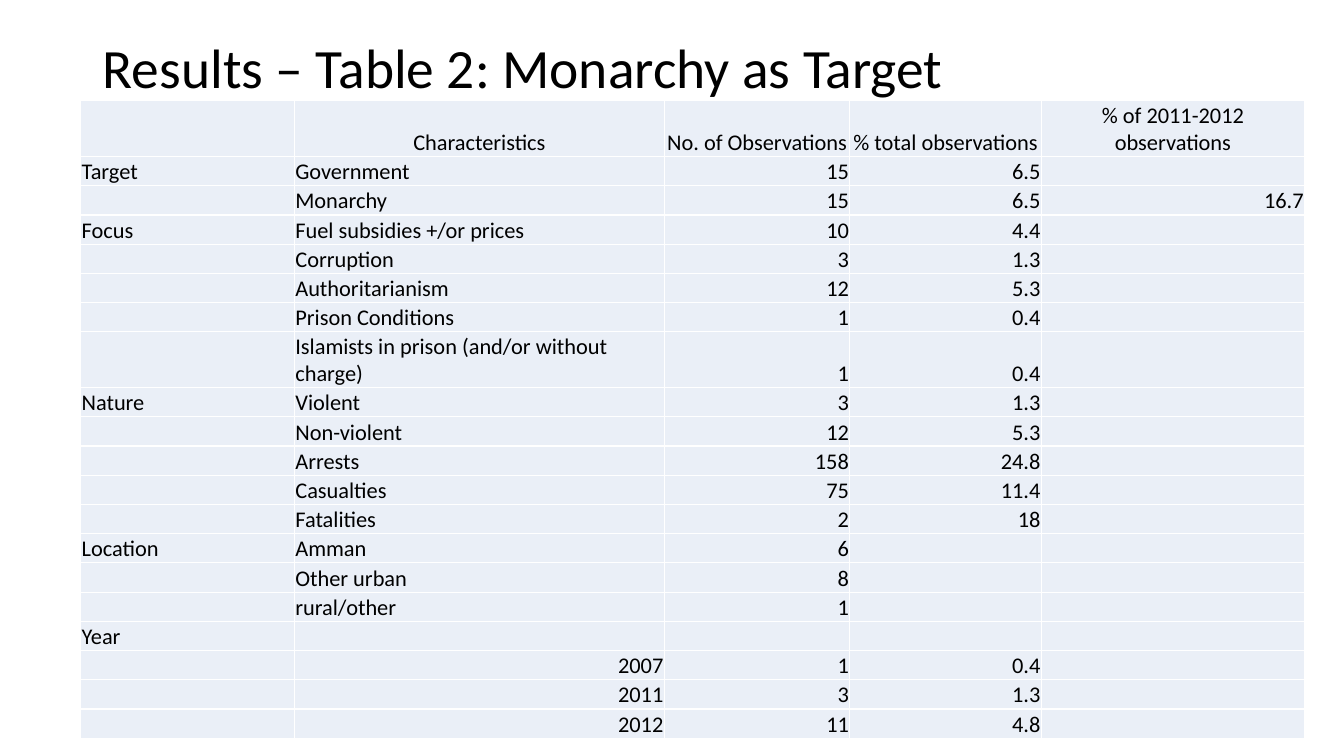
from dataclasses import dataclass

from lxml import etree
from pptx import Presentation, util as u
from pptx.dml.color import RGBColor
from pptx.enum import text
from pptx.oxml.ns import qn


@dataclass(frozen=True)
class Theme:
    font: str = "Calibri"
    ink: str = "000000"
    cell: str = "EAEFF7"
    rule: str = "FFFFFF"
    title_size: float = 39.6
    table_size: float = 16


theme = Theme()
LEFT, CENTER, RIGHT = text.PP_ALIGN.LEFT, text.PP_ALIGN.CENTER, text.PP_ALIGN.RIGHT

column_widths = [2.12, 3.67, 1.84, 1.9, 2.61]
row_height = 0.29
table_left, table_top = 0.8, 1

header = ["", "Characteristics", "No. of Observations", "% total observations",
          "% of 2011-2012 observations"]
findings = [
    ["Target", "Government", "15", "6.5", ""],
    ["", "Monarchy", "15", "6.5", "16.7"],
    ["Focus", "Fuel subsidies +/or prices", "10", "4.4", ""],
    ["", "Corruption", "3", "1.3", ""],
    ["", "Authoritarianism", "12", "5.3", ""],
    ["", "Prison Conditions", "1", "0.4", ""],
    ["", "Islamists in prison (and/or without charge)", "1", "0.4", ""],
    ["Nature", "Violent", "3", "1.3", ""],
    ["", "Non-violent", "12", "5.3", ""],
    ["", "Arrests", "158", "24.8", ""],
    ["", "Casualties", "75", "11.4", ""],
    ["", "Fatalities", "2", "18", ""],
    ["Location", "Amman", "6", "", ""],
    ["", "Other urban", "8", "", ""],
    ["", "rural/other", "1", "", ""],
    ["Year", "", "", "", ""],
    ["", "2007", "1", "0.4", ""],
    ["", "2011", "3", "1.3", ""],
    ["", "2012", "11", "4.8", ""],
]
rows = [header] + findings


def write(paragraph, wording, size, align):
    paragraph.text = wording
    paragraph.alignment = align
    for run in paragraph.runs:
        run.font.name = theme.font
        run.font.size = u.Pt(size)
        run.font.color.rgb = RGBColor.from_string(theme.ink)
    if not wording:
        # An empty cell needs its own type size, or it would stretch the row.
        etree.SubElement(paragraph._p, qn("a:endParaRPr"), sz=str(int(size * 100)))


def paint(cell):
    """Fill the cell and rule its four sides."""
    cell.fill.solid()
    cell.fill.fore_color.rgb = RGBColor.from_string(theme.cell)
    properties = cell._tc.get_or_add_tcPr()
    for place, side in enumerate(["lnL", "lnR", "lnT", "lnB"]):
        border = etree.Element(qn(f"a:{side}"), w=str(u.Pt(1)))
        fill = etree.SubElement(border, qn("a:solidFill"))
        etree.SubElement(fill, qn("a:srgbClr"), val=theme.rule)
        properties.insert(place, border)


deck = Presentation()
deck.slide_width, deck.slide_height = u.Inches(13.33), u.Inches(7.5)
slide = deck.slides.add_slide(deck.slide_layouts[5])

title = slide.shapes.title
title.left, title.top = u.Inches(0.92), u.Inches(0.4)
title.width, title.height = u.Inches(11.5), u.Inches(0.6)
title.text_frame.auto_size = text.MSO_AUTO_SIZE.NONE
title.text_frame.vertical_anchor = text.MSO_ANCHOR.MIDDLE
heading = title.text_frame.paragraphs[0]
write(heading, "Results – Table 2: Monarchy as Target", theme.title_size, LEFT)
heading.line_spacing = 0.9

results = slide.shapes.add_table(
    len(rows), len(header), u.Inches(table_left), u.Inches(table_top),
    u.Inches(sum(column_widths)), u.Inches(row_height * len(rows))).table
results.first_row = results.horz_banding = False
for column, width in zip(results.columns, column_widths):
    column.width = u.Inches(width)

for r, values in enumerate(rows):
    results.rows[r].height = u.Inches(row_height)
    for c, value in enumerate(values):
        cell = results.cell(r, c)
        cell.margin_left = cell.margin_right = cell.margin_top = u.Inches(0.01)
        cell.margin_bottom = 0
        cell.vertical_anchor = text.MSO_ANCHOR.BOTTOM
        is_number = value.replace(".", "").isdigit()
        align = CENTER if r == 0 else RIGHT if is_number else LEFT
        write(cell.text_frame.paragraphs[0], value, theme.table_size, align)
        paint(cell)

deck.save("out.pptx")
